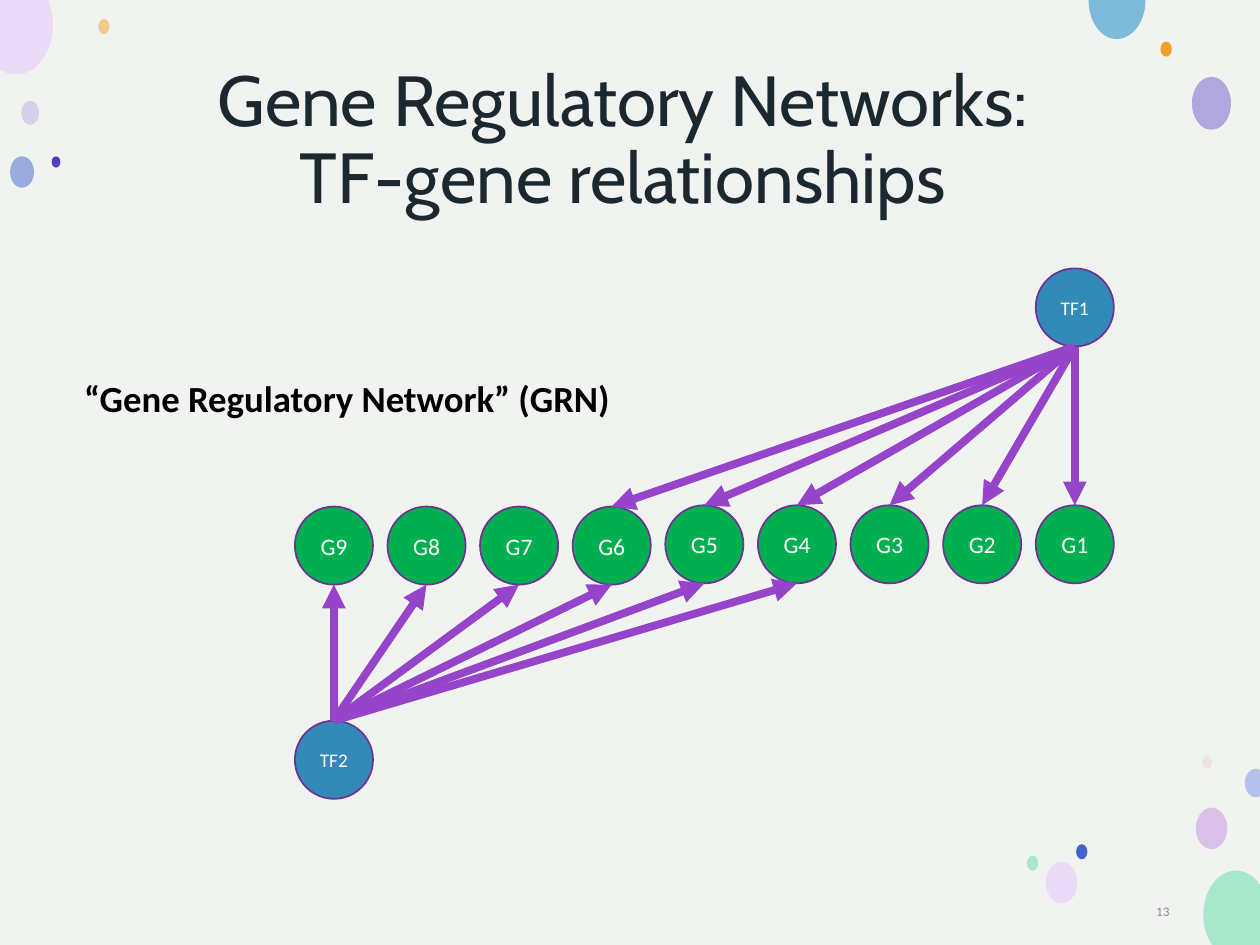
from dataclasses import dataclass

from lxml import etree
from pptx import Presentation
from pptx.dml.color import RGBColor
from pptx.enum.shapes import MSO_CONNECTOR, MSO_SHAPE
from pptx.enum.text import MSO_ANCHOR, PP_ALIGN
from pptx.oxml.ns import qn
from pptx.util import Inches, Pt

OVAL, RECTANGLE = MSO_SHAPE.OVAL, MSO_SHAPE.RECTANGLE
STRAIGHT = MSO_CONNECTOR.STRAIGHT
MIDDLE, TOP = MSO_ANCHOR.MIDDLE, MSO_ANCHOR.TOP
LEFT, CENTER, RIGHT = PP_ALIGN.LEFT, PP_ALIGN.CENTER, PP_ALIGN.RIGHT
SLIDE_W, SLIDE_H = 10, 7.5
TOP_SITE = 0


@dataclass(frozen=True)
class Theme:
    background: str = "F1F3F0"
    title: str = "1B282F"
    factor: str = "338AB9"
    gene: str = "00B050"
    outline: str = "6F3396"
    arrow: str = "9645CB"
    node_text: str = "FFFFFF"
    caption: str = "000000"
    number: str = "8C8C8C"
    heading_font: str = "Cabin"
    body_font: str = "Calibri"
    title_size: float = 40.5
    caption_size: float = 21
    gene_size: float = 13.5
    factor_size: float = 11
    number_size: float = 7.5


THEME = Theme()

DOTS = [
    (0.17, 0.8, 0.14, 0.19, "BAB1E5", 50),
    (0.78, 0.15, 0.09, 0.12, "F39E29", 50),
    (9.49, 6.41, 0.25, 0.33, "C08FE0", 50),
    (0.08, 1.24, 0.19, 0.25, "4564CB", 50),
    (9.46, 0.61, 0.31, 0.42, "988AD9", 72),
    (9.21, 0.33, 0.09, 0.12, "F39E29", 100),
    (9.54, 6, 0.08, 0.1, "E3BEBE", 28),
    (8.54, 6.7, 0.09, 0.12, "4564CB", 100),
    (8.3, 6.84, 0.25, 0.33, "EADAF5", 100),
    (8.15, 6.79, 0.09, 0.12, "A9E7CA", 100),
    (0.41, 1.24, 0.07, 0.09, "553EBD", 100),
]
EDGE_DOTS = [
    ("A9E7CA", (9.81, 6.91), [
        (9.88, 6.91, 9.95, 6.95, 9.99, 7.01), (10, 7.02), (10, 7.5),
        (9.62, 7.5), (9.61, 7.48), (9.57, 7.42, 9.55, 7.34, 9.55, 7.26),
        (9.55, 7.06, 9.67, 6.91, 9.81, 6.91)]),
    ("EADAF5", (0, 0), [
        (0.38, 0), (0.4, 0.05), (0.41, 0.09, 0.42, 0.14, 0.42, 0.2),
        (0.42, 0.41, 0.29, 0.59, 0.13, 0.59),
        (0.09, 0.59, 0.05, 0.58, 0.01, 0.56), (0, 0.55)]),
    ("7EBBDB", (8.64, 0), [
        (9.09, 0), (9.09, 0.01), (9.09, 0.17, 8.99, 0.31, 8.86, 0.31),
        (8.74, 0.31, 8.64, 0.17, 8.64, 0.01)]),
    ("B5C1EA", (9.97, 6.1), [
        (10, 6.11), (10, 6.32), (9.97, 6.33),
        (9.92, 6.33, 9.88, 6.28, 9.88, 6.21),
        (9.88, 6.15, 9.92, 6.1, 9.97, 6.1)]),
]


def paint(shape, color, alpha=100):
    shape.shadow.inherit = False
    shape.fill.solid()
    shape.fill.fore_color.rgb = RGBColor.from_string(color)
    if alpha < 100:
        tint = shape.fill._xPr.find(qn("a:solidFill"))[0]
        etree.SubElement(tint, qn("a:alpha"), val=str(alpha * 1000))
    shape.line.fill.background()


def add_run(paragraph, text, font, size, color, bold=False):
    run = paragraph.add_run()
    run.text = text
    run.font.name = font
    run.font.size = Pt(size)
    run.font.bold = bold
    run.font.color.rgb = RGBColor.from_string(color)


def add_label(slide, box, lines, font, size, color, align, anchor=TOP,
              bold=False, wrap=True, spacing=1.0):
    frame = slide.shapes.add_textbox(*map(Inches, box)).text_frame
    frame.word_wrap = wrap
    frame.vertical_anchor = anchor
    paragraph = frame.paragraphs[0]
    paragraph.alignment = align
    paragraph.line_spacing = spacing
    for index, line in enumerate(lines):
        if index:
            paragraph.add_line_break()
        add_run(paragraph, line, font, size, color, bold)


def add_edge_dot(slide, color, start, segments):
    points = [(Inches(x), Inches(y)) for segment in segments
              for x, y in zip(segment[::2], segment[1::2])]
    builder = slide.shapes.build_freeform(*map(Inches, start))
    builder.add_line_segments(points, close=True)
    dot = builder.convert_to_shape()
    paint(dot, color)
    steps = iter(list(dot._element.iter(qn("a:lnTo"))))
    for segment in segments:
        first = next(steps)
        if len(segment) == 6:
            first.tag = qn("a:cubicBezTo")
            for _ in range(2):
                control = next(steps)
                first.append(control[0])
                control.getparent().remove(control)


def add_backdrop(slide, left, top, width, height):
    box = map(Inches, (left, top, width, height))
    paint(slide.shapes.add_shape(RECTANGLE, *box), THEME.background)
    for *box, color, alpha in DOTS:
        paint(slide.shapes.add_shape(OVAL, *map(Inches, box)), color, alpha)
    for edge_dot in EDGE_DOTS:
        add_edge_dot(slide, *edge_dot)


def add_node(slide, left, top, size, name, color, text_size):
    node = slide.shapes.add_shape(
        OVAL, Inches(left), Inches(top), Inches(size), Inches(size))
    paint(node, color)
    node.line.color.rgb = RGBColor.from_string(THEME.outline)
    node.line.width = Pt(1)
    frame = node.text_frame
    frame.margin_left = frame.margin_right = 0
    frame.vertical_anchor = MIDDLE
    paragraph = frame.paragraphs[0]
    paragraph.alignment = CENTER
    add_run(paragraph, name, THEME.body_font, text_size, THEME.node_text)
    return node


def add_regulation(slide, upper, lower, upward=False):
    upper_end = (upper.left + upper.width // 2, upper.top + upper.height)
    lower_end = (lower.left + lower.width // 2, lower.top)
    ends = (lower_end, upper_end) if upward else (upper_end, lower_end)
    arrow = slide.shapes.add_connector(STRAIGHT, *ends[0], *ends[1])
    if upward:
        arrow.begin_connect(lower, TOP_SITE)
    else:
        arrow.end_connect(lower, TOP_SITE)
    arrow.line.color.rgb = RGBColor.from_string(THEME.arrow)
    arrow.line.width = Pt(4.5)
    etree.SubElement(arrow.line._get_or_add_ln(), qn("a:tailEnd"), type="triangle")
    etree.SubElement(arrow._element.spPr, qn("a:effectLst"))


def add_network(slide, left, top, width, height):
    size, gene_count, targets = 0.62, 9, 6
    last = left + width - size
    pitch = (width - size) / (gene_count - 1)
    tf1 = add_node(slide, last, top, size, "TF1", THEME.factor, THEME.factor_size)
    tf2 = add_node(slide, left, top + height - size, size, "TF2",
                   THEME.factor, THEME.factor_size)
    genes = [
        add_node(slide, last - index * pitch, top + (1.88 if index < 5 else 1.89),
                 size, f"G{index + 1}", THEME.gene, THEME.gene_size)
        for index in range(gene_count)
    ]
    for gene in genes[:targets]:
        add_regulation(slide, tf1, gene)
    for gene in genes[-targets:]:
        add_regulation(slide, gene, tf2, upward=True)


def main():
    deck = Presentation()
    deck.slide_width, deck.slide_height = Inches(SLIDE_W), Inches(SLIDE_H)
    slide = deck.slides.add_slide(deck.slide_layouts[6])
    add_backdrop(slide, 0, 0, SLIDE_W, SLIDE_H)
    add_label(slide, (0.64, 0.4, 8.74, 1.45),
              ["Gene Regulatory Networks: ", "TF-gene relationships "],
              THEME.heading_font, THEME.title_size, THEME.title, CENTER,
              anchor=MIDDLE, spacing=0.9)
    add_network(slide, 2.34, 2.13, 6.5, 4.21)
    add_label(slide, (0.57, 2.93, 4.42, 0.45), ["“Gene Regulatory Network” (GRN)"],
              THEME.body_font, THEME.caption_size, THEME.caption, LEFT,
              bold=True, wrap=False)
    add_label(slide, (7.13, 7.1, 2.25, 0.26), ["13"], THEME.body_font,
              THEME.number_size, THEME.number, RIGHT, anchor=MIDDLE)
    deck.save("out.pptx")


if __name__ == "__main__":
    main()
